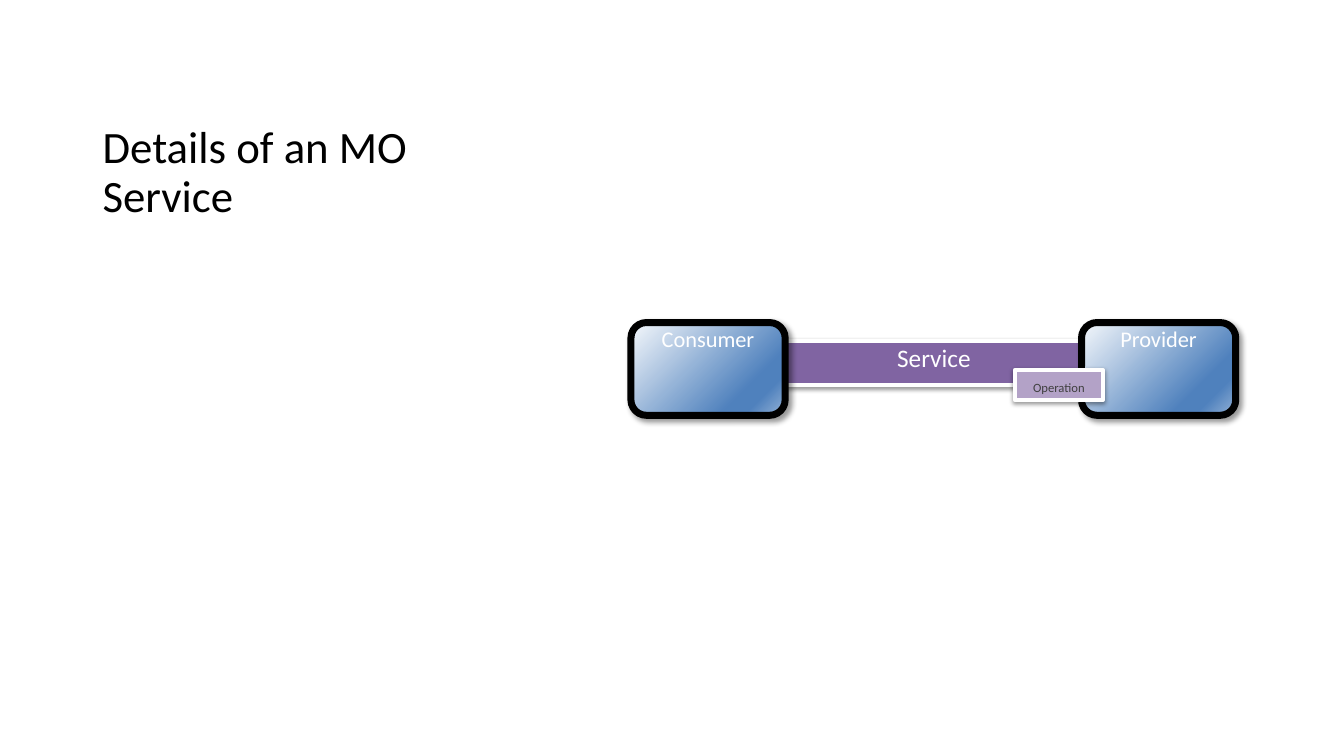
from lxml import etree
from pptx import Presentation
from pptx.dml.color import RGBColor
from pptx.enum import shapes, text
from pptx.oxml import ns
from pptx.util import Pt

# Content: left, top, width, height in points
TITLE = ("Details of an MO Service", (66.24, 36, 309.6, 126))
STOPS = [(0, "F6F9FC"), (74, "4F81BD"), (83, "4F81BD"), (100, "95B3D7")]
SOFT = dict(alpha=38, blur=3.1, dist=1.6, angle=90)
DROP = dict(alpha=40, blur=4, dist=3, angle=45)
BARS = {
    "Service": dict(box=(546.48, 243.36, 241.2, 31.68), fill="8064A2",
                    size=18, color="FFFFFF"),
    "Operation": dict(box=(725.04, 264.24, 62.64, 21.6), fill="B3A2C7",
                      size=9, color="404040"),
}
NODES = [("Provider", 772.56), ("Consumer", 450.72)]
NODE_TOP, NODE_W, NODE_H = 230.4, 110.16, 66.24

deck = Presentation()
deck.slide_width, deck.slide_height = Pt(960), Pt(540)
slide = deck.slides.add_slide(deck.slide_layouts[6])


def paint(target, color):
    target.rgb = RGBColor.from_string(color)


def write(shape, words, size, color, align, anchor, space):
    frame = shape.text_frame
    frame.word_wrap = True
    frame.vertical_anchor = anchor
    para = frame.paragraphs[0]
    para.alignment, para.line_spacing = align, space
    run = para.add_run()
    run.text = words
    run.font.name, run.font.size = "Calibri", Pt(size)
    paint(run.font.color, color)


def sub(parent, tag, **attrs):
    return etree.SubElement(parent, ns.qn(tag),
                            {k: str(v) for k, v in attrs.items()})


def shade(shape, alpha, blur, dist, angle):
    shape.shadow.inherit = False
    effects = shape._element.spPr.find(ns.qn("a:effectLst"))
    outer = sub(effects, "a:outerShdw", blurRad=int(Pt(blur)),
                dist=int(Pt(dist)), dir=angle * 60000, rotWithShape=0)
    tint = sub(outer, "a:srgbClr", val="000000")
    sub(tint, "a:alpha", val=alpha * 1000)


def blend(shape, stops):
    shape.fill.gradient()
    shape.fill.gradient_angle = 315
    group = next(shape._element.spPr.iter(ns.qn("a:gsLst")))
    for old in list(group):
        group.remove(old)
    for place, color in stops:
        stop = sub(group, "a:gs", pos=place * 1000)
        sub(stop, "a:srgbClr", val=color)


def block(kind, box, words, fill, edge, width, glow, size, color, anchor):
    shape = slide.shapes.add_shape(kind, *map(Pt, box))
    if isinstance(fill, str):
        shape.fill.solid()
        paint(shape.fill.fore_color, fill)
    else:
        blend(shape, fill)
    paint(shape.line.color, edge)
    shape.line.width = Pt(width)
    shade(shape, **glow)
    write(shape, words, size=size, color=color, anchor=anchor,
          align=text.PP_ALIGN.CENTER, space=Pt(14))


def bar(name):
    block(shapes.MSO_SHAPE.RECTANGLE, words=name, edge="FFFFFF", width=3,
          glow=SOFT, anchor=text.MSO_ANCHOR.MIDDLE, **BARS[name])


# Title
words, box = TITLE
write(slide.shapes.add_textbox(*map(Pt, box)), words, size=32, color="000000",
      align=text.PP_ALIGN.LEFT, anchor=text.MSO_ANCHOR.BOTTOM, space=0.9)

# Service link behind its two ends, operation on top
bar("Service")
for name, left in NODES:
    block(shapes.MSO_SHAPE.ROUNDED_RECTANGLE, (left, NODE_TOP, NODE_W, NODE_H),
          name, fill=STOPS, edge="000000", width=5, glow=DROP, size=16,
          color="FFFFFF", anchor=text.MSO_ANCHOR.TOP)
bar("Operation")

deck.save("out.pptx")
